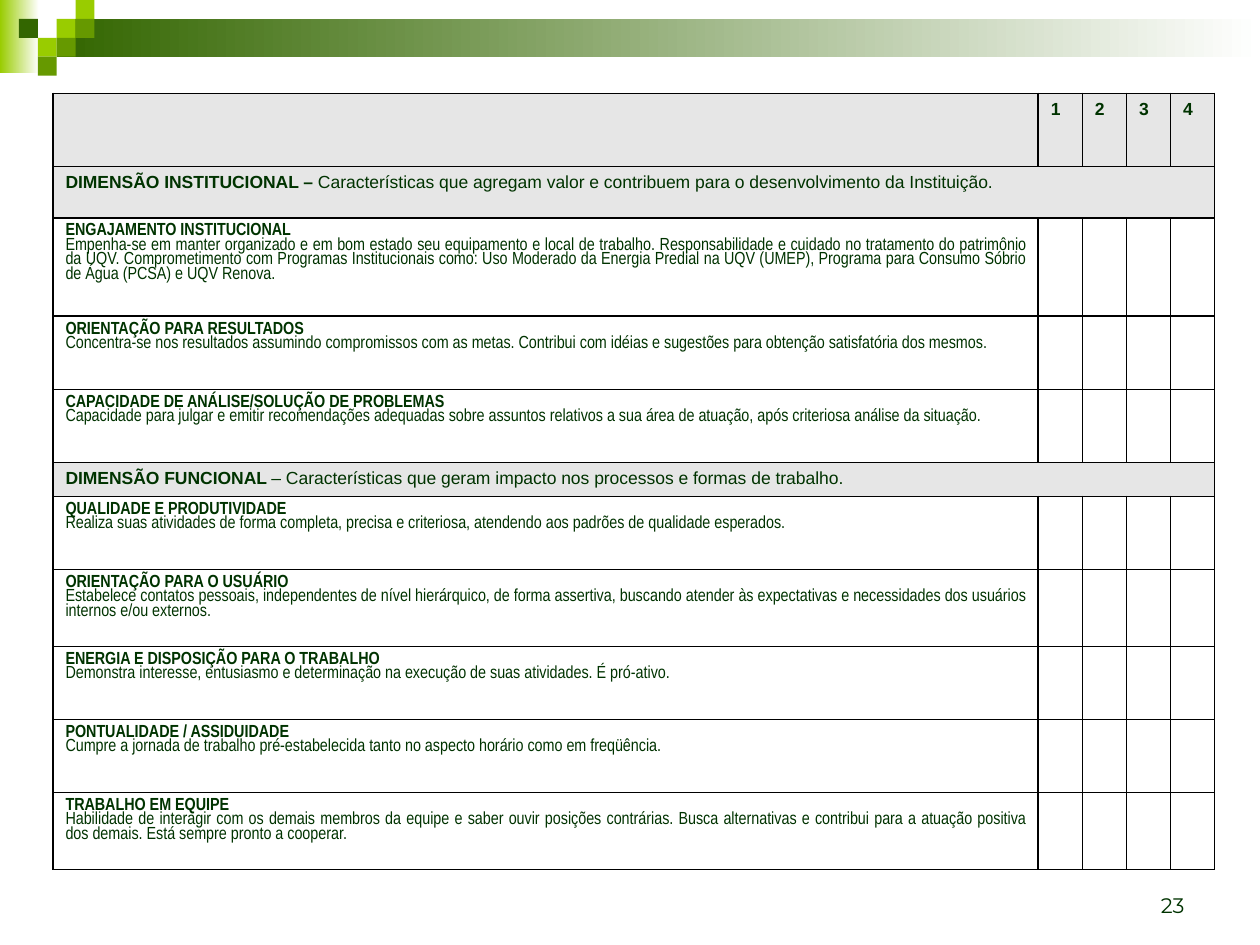
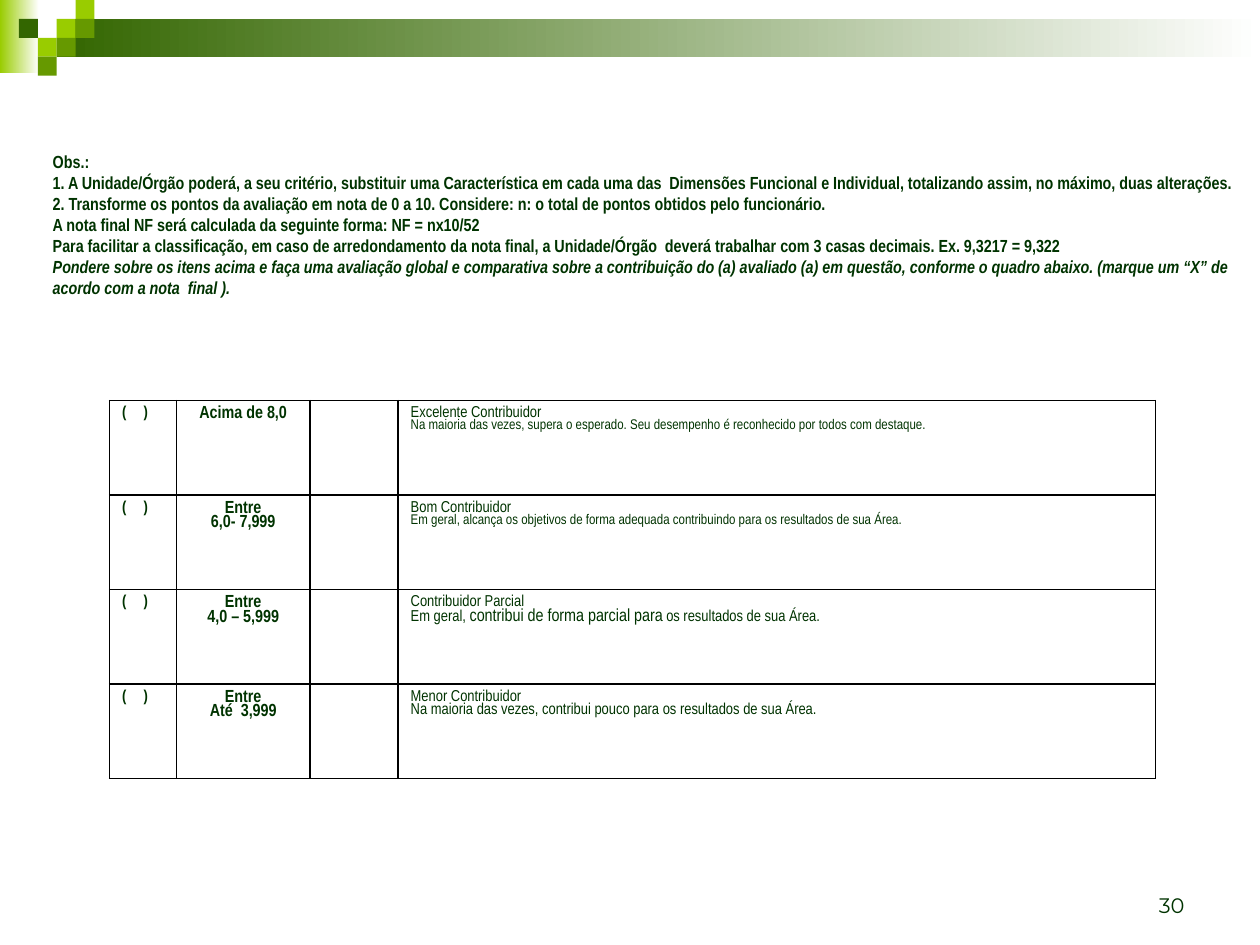
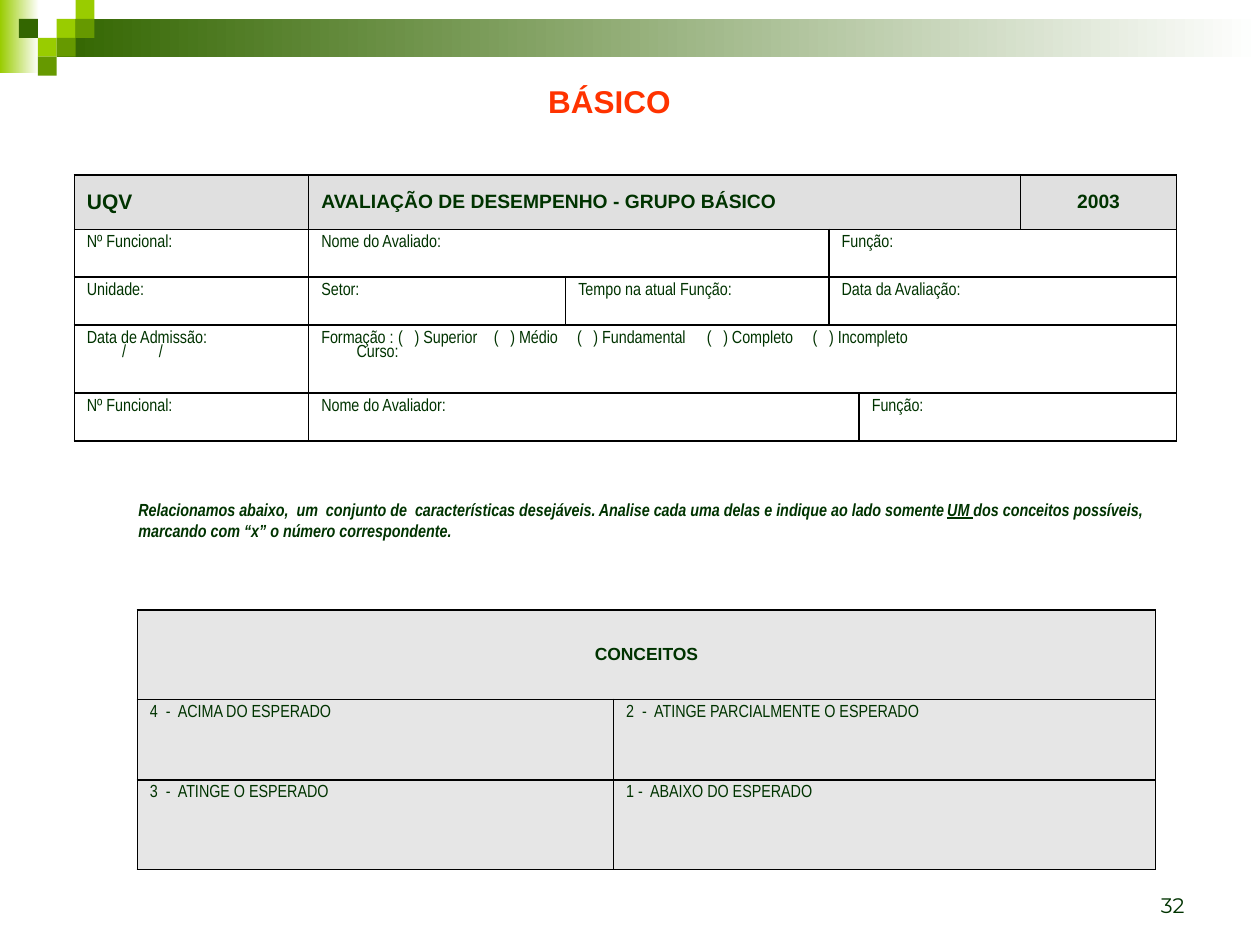
from dataclasses import dataclass, replace

from lxml.etree import SubElement
from pptx import Presentation
from pptx.dml.color import RGBColor
from pptx.enum.shapes import MSO_SHAPE as Shape
from pptx.enum.text import MSO_ANCHOR as Anchor, PP_ALIGN as Align
from pptx.oxml.ns import qn
from pptx.util import Inches, Pt

WIDTH, HEIGHT = 10, 7.5
TITLE_ONLY, BLANK = 5, 6


class Theme:
    ink, accent, line = "003300", "FF3300", "000000"
    lime, leaf, forest, white = "99CC00", "669900", "336600", "FFFFFF"
    grey, header_grey = "E6E6E6", "E0E0E0"
    sans, narrow, number = "Arial", "Arial Narrow", "Montserrat"
    tiny, small, body, heading, large, title = 8, 9, 10, 11, 12, 18
    tight = 0.9
    tile = 0.15


@dataclass(frozen=True)
class Style:
    size: float = Theme.body
    font: str = Theme.narrow
    bold: bool = False
    italic: bool = False
    color: str = Theme.ink
    align: Align = Align.LEFT
    spacing: float = 1.0


@dataclass(frozen=True)
class Para:
    """Text is a string, or a list of (text, font attributes) runs; tabs are in inches."""
    text: object
    style: Style
    tabs: tuple = ()


@dataclass(frozen=True)
class Cell:
    paras: tuple = ()
    span: int = 1
    fill: str = ""
    anchor: Anchor = Anchor.TOP
    framed: bool = True


NARROW = Style(spacing=Theme.tight)
NARROW_BOLD = replace(NARROW, bold=True)
JUSTIFIED = replace(NARROW, align=Align.JUSTIFY)
CENTERED = replace(NARROW_BOLD, align=Align.CENTER)
SANS = Style(font=Theme.sans)
SANS_BOLD = replace(SANS, bold=True)
NOTE = Style(bold=True)
NOTE_ITALIC = replace(NOTE, italic=True)
TITLE = replace(SANS_BOLD, size=Theme.title, color=Theme.accent)
PAGE_NUMBER = Style(Theme.large, Theme.number, align=Align.RIGHT)

# Content: criteria form
SCORES = ["1", "2", "3", "4"]
DIMENSIONS = [
    ("DIMENSÃO INSTITUCIONAL – ",
     "Características que agregam valor e contribuem para o desenvolvimento da Instituição.",
     0.41, [
         ("ENGAJAMENTO INSTITUCIONAL",
          "Empenha-se em manter organizado e em bom estado seu equipamento e local de trabalho. "
          "Responsabilidade e cuidado no tratamento do patrimônio da UQV. Comprometimento com "
          "Programas Institucionais como: Uso Moderado da Energia Predial na UQV (UMEP), "
          "Programa para Consumo Sóbrio de Água (PCSA) e UQV Renova.", 0.78),
         ("ORIENTAÇÃO PARA RESULTADOS",
          "Concentra-se nos resultados assumindo compromissos com as metas. Contribui com idéias "
          "e sugestões para obtenção satisfatória dos mesmos.", 0.58),
         ("CAPACIDADE DE ANÁLISE/SOLUÇÃO DE PROBLEMAS",
          "Capacidade para julgar e emitir recomendações adequadas sobre assuntos relativos a sua "
          "área de atuação, após criteriosa análise da situação.", 0.58),
     ]),
    ("DIMENSÃO FUNCIONAL ",
     "– Características que geram impacto nos processos e formas de trabalho.",
     0.27, [
         ("QUALIDADE E PRODUTIVIDADE",
          "Realiza suas atividades de forma completa, precisa e criteriosa, atendendo aos padrões "
          "de qualidade esperados.", 0.58),
         ("ORIENTAÇÃO PARA O USUÁRIO",
          "Estabelece contatos pessoais, independentes de nível hierárquico, de forma assertiva, "
          "buscando atender às expectativas e necessidades dos usuários internos e/ou externos.",
          0.61),
         ("ENERGIA E DISPOSIÇÃO PARA O TRABALHO",
          "Demonstra interesse, entusiasmo e determinação na execução de suas atividades. "
          "É pró-ativo.", 0.58),
         ("PONTUALIDADE / ASSIDUIDADE",
          "Cumpre a jornada de trabalho pré-estabelecida tanto no aspecto horário como em "
          "freqüência.", 0.58),
         ("TRABALHO EM EQUIPE",
          "Habilidade de interagir com os demais membros da equipe e saber ouvir posições "
          "contrárias. Busca alternativas e contribui para a atuação positiva dos demais. "
          "Está sempre pronto a cooperar.", 0.61),
     ]),
]

# Content: final grade
REMARKS = [
    "Obs.:",
    "1. A Unidade/Órgão poderá, a seu critério, substituir uma Característica em cada uma das  "
    "Dimensões Funcional e Individual, totalizando assim, no máximo, duas alterações.",
    "2. Transforme os pontos da avaliação em nota de 0 a 10. Considere: n: o total de pontos "
    "obtidos pelo funcionário.",
    "A nota final NF será calculada da seguinte forma: NF = nx10/52",
    "Para facilitar a classificação, em caso de arredondamento da nota final, a Unidade/Órgão  "
    "deverá trabalhar com 3 casas decimais. Ex. 9,3217 = 9,322",
]
INSTRUCTION = (
    "Pondere sobre os itens acima e faça uma avaliação global e comparativa sobre a contribuição "
    "do (a) avaliado (a) em questão, conforme o quadro abaixo. (marque um “X” de acordo com a "
    "nota  final ).")
GRADES = [
    (["Acima de 8,0"], "Excelente Contribuidor",
     "Na maioria das vezes, supera o esperado. Seu desempenho é reconhecido por todos com "
     "destaque.", Theme.tiny),
    (["Entre", "6,0- 7,999"], "Bom Contribuidor",
     "Em geral, alcança os objetivos de forma adequada contribuindo para os resultados de sua "
     "Área.", Theme.tiny),
    (["Entre", "4,0 – 5,999"], "Contribuidor Parcial",
     [("Em geral, ", {}), ("contribui de forma parcial para", {"size": Pt(Theme.body)}),
      (" os resultados de sua Área.", {})], Theme.small),
    (["Entre", "Até  3,999"], "Menor Contribuidor",
     "Na maioria das vezes, contribui pouco para os resultados de sua Área.", Theme.small),
]

# Content: identification form, each field with the number of columns it takes
HEADINGS = [("UQV", 1, Theme.large, Align.LEFT),
            ("AVALIAÇÃO DE DESEMPENHO - GRUPO BÁSICO", 4, Theme.heading, Align.LEFT),
            ("2003", 2, Theme.heading, Align.CENTER)]
OPTION_STARTS = (0.61, 1.37, 2.03, 3.06, 3.9)
OPTION_GAP = 0.13
OPTION_TABS = tuple(x for start in OPTION_STARTS for x in (start, start + OPTION_GAP))
EDUCATION = "Formação :" + "".join(
    f"\t(\t) {level}" for level in ["Superior", "Médio", "Fundamental", "Completo", "Incompleto"])
FIELDS = [
    [("Nº Funcional:", 1), ("Nome do Avaliado:", 2), ("Função:", 4)],
    [("Unidade:", 1), ("Setor:", 1), ("Tempo na atual Função:", 1), ("Data da Avaliação:", 4)],
    [("Data de Admissão:", 1, ("\t/\t/", (0.28, 0.57))),
     (EDUCATION, 6, ("\tCurso:", (0.28,)))],
    [("Nº Funcional:", 1), ("Nome do Avaliador:", 3), ("Função:", 3)],
]
GUIDANCE = [
    [("Relacionamos abaixo,  um  conjunto de  características desejáveis. Analise cada uma delas "
      "e indique ao lado somente ", {}), ("UM ", {"underline": True}),
     ("dos conceitos possíveis,", {})],
    "marcando com “x” o número correspondente.",
]
CONCEPTS = [("4  -  ACIMA DO ESPERADO", "2  -  ATINGE PARCIALMENTE O ESPERADO"),
            ("3  -  ATINGE O ESPERADO", "1 -  ABAIXO DO ESPERADO")]


def rgb(color):
    return RGBColor.from_string(color)


def write(frame, paras):
    for index, para in enumerate(paras):
        style = para.style
        line = frame.paragraphs[0] if index == 0 else frame.add_paragraph()
        line.alignment, line.line_spacing = style.align, style.spacing
        if para.tabs:
            stops = SubElement(line._p.get_or_add_pPr(), qn("a:tabLst"))
            for position in para.tabs:
                SubElement(stops, qn("a:tab"), pos=str(Inches(position)), algn="l")
        font = line.font
        font.size, font.name = Pt(style.size), style.font
        font.bold, font.italic = style.bold, style.italic
        font.color.rgb = rgb(style.color)
        runs = [(para.text, {})] if isinstance(para.text, str) else para.text
        for text, changes in runs:
            run = line.add_run()
            run.text = text
            for attribute, value in changes.items():
                setattr(run.font, attribute, value)


def add_text(slide, box, paras, anchor, bottom=0.05):
    frame = slide.shapes.add_textbox(*map(Inches, box)).text_frame
    frame.word_wrap, frame.vertical_anchor = True, anchor
    frame.margin_bottom = Inches(bottom)
    write(frame, paras)


def add_block(slide, box, color, fade=False):
    """Draw a borderless rectangle, plain or fading to white from left to right."""
    block = slide.shapes.add_shape(Shape.RECTANGLE, *map(Inches, box))
    block.shadow.inherit = False
    block.line.fill.background()
    if fade:
        block.fill.gradient()
        block.fill.gradient_angle = 0
        for stop, shade, place in zip(block.fill.gradient_stops, (color, Theme.white), (0, 1)):
            stop.color.rgb, stop.position = rgb(shade), place
    else:
        block.fill.solid()
        block.fill.fore_color.rgb = rgb(color)


def start_slide(deck, layout, number):
    """Add a slide with the shared band, corner tiles and page number."""
    slide = deck.slides.add_slide(deck.slide_layouts[layout])
    tile = Theme.tile
    add_block(slide, (0, 0, 0.31, 0.58), Theme.lime, fade=True)
    add_block(slide, (3 * tile, tile, WIDTH - 3 * tile, 2 * tile), Theme.forest, fade=True)
    tiles = [(3, 1, Theme.lime), (4, 0, Theme.lime), (4, 1, Theme.leaf), (2, 2, Theme.lime),
             (1, 1, Theme.forest), (3, 2, Theme.leaf), (2, 3, Theme.leaf)]
    for column, row, color in tiles:
        add_block(slide, (column * tile, row * tile, tile, tile), color)
    add_text(slide, (7.17, 6.83, 2.33, 0.5), [Para(number, PAGE_NUMBER)], Anchor.BOTTOM)
    return slide


def add_border(cell, framed):
    """Line all four sides, or only the top one when the cell is not framed."""
    props = cell._tc.get_or_add_tcPr()
    for side in "LRTB":
        edge = SubElement(props, qn(f"a:ln{side}"), w=str(Pt(1)))
        if framed or side == "T":
            SubElement(SubElement(edge, qn("a:solidFill")), qn("a:srgbClr"), val=Theme.line)
        else:
            SubElement(edge, qn("a:noFill"))


def add_grid(slide, left, top, columns, heights, rows):
    """Build a table from rows of Cells; a Cell with a span covers the columns after it."""
    size = (left, top, sum(columns), sum(heights))
    table = slide.shapes.add_table(len(heights), len(columns), *map(Inches, size)).table
    table.first_row = table.horz_banding = False
    for column, width in zip(table.columns, columns):
        column.width = Inches(width)
    for row, height in zip(table.rows, heights):
        row.height = Inches(height)
    for r, row in enumerate(rows):
        c = 0
        for part in row:
            last = c + part.span - 1
            for column in range(c, last + 1):
                cell = table.cell(r, column)
                add_border(cell, part.framed)
                if part.fill:
                    cell.fill.solid()
                    cell.fill.fore_color.rgb = rgb(part.fill)
                else:
                    cell.fill.background()
            cell = table.cell(r, c)
            if part.span > 1:
                cell.merge(table.cell(r, last))
            cell.vertical_anchor = part.anchor
            write(cell.text_frame, part.paras)
            c = last + 1


def build_criteria(deck):
    slide = start_slide(deck, BLANK, "23")
    rows = [[Cell(fill=Theme.grey)]
            + [Cell((Para(score, SANS_BOLD),), fill=Theme.grey) for score in SCORES]]
    heights = [0.58]
    for name, meaning, height, criteria in DIMENSIONS:
        heading = Para([(name, {"bold": True}), (meaning, {})],
                       replace(SANS, align=Align.JUSTIFY))
        rows.append([Cell((heading,), span=1 + len(SCORES), fill=Theme.grey)])
        heights.append(height)
        for criterion, description, height in criteria:
            paras = (Para(criterion, NARROW_BOLD), Para(description, JUSTIFIED))
            rows.append([Cell(paras)] + [Cell()] * len(SCORES))
            heights.append(height)
    add_grid(slide, 0.42, 0.74, [7.82] + [0.35] * len(SCORES), heights, rows)


def build_grades(deck):
    slide = start_slide(deck, BLANK, "30")
    remarks = [Para(remark, NOTE) for remark in REMARKS] + [Para(INSTRUCTION, NOTE_ITALIC)]
    add_text(slide, (0.32, 1.11, 9.65, 1.57), remarks, Anchor.MIDDLE, bottom=0.28)
    tick = Para("(\t)", replace(NARROW_BOLD, size=Theme.small), tabs=(0.17,))
    rows = []
    for limits, name, description, size in GRADES:
        bounds = tuple(Para(limit, CENTERED) for limit in limits)
        verdict = (Para(name, replace(JUSTIFIED, size=Theme.small)),
                   Para(description, replace(JUSTIFIED, size=size)))
        rows.append([Cell((tick,)), Cell(bounds), Cell(), Cell(verdict)])
    add_grid(slide, 0.87, 3.18, [0.53, 1.06, 0.7, 6.01], [0.75] * len(rows), rows)


def field_cell(label, span, second=None):
    paras = [Para(label, NARROW, tabs=OPTION_TABS if "\t" in label else ())]
    if second:
        text, tabs = second
        paras.append(Para(text, NARROW, tabs=tabs))
    return Cell(tuple(paras), span)


def build_identification(deck):
    slide = start_slide(deck, TITLE_ONLY, "32")
    title = slide.shapes.title
    title.left, title.top, title.width, title.height = map(Inches, (4.25, 0.6, 1.5, 0.4))
    title.text_frame.vertical_anchor = Anchor.TOP
    write(title.text_frame, [Para("BÁSICO", TITLE)])

    header = [Cell((Para(text, replace(SANS_BOLD, size=size, align=align)),), span,
                   Theme.header_grey, Anchor.MIDDLE) for text, span, size, align in HEADINGS]
    fields = [[field_cell(*field) for field in row] for row in FIELDS]
    closing = [Cell(span=span, framed=False) for span in (1, 1, 1, 1, 2, 1)]
    add_grid(slide, 0.59, 1.39, [1.86, 2.04, 2.09, 0.23, 1.28, 0.23, 1.01],
             [0.43, 0.38, 0.38, 0.54, 0.38, 0.81], [header, *fields, closing])

    add_text(slide, (1, 3.88, 8.17, 0.73), [Para(text, NOTE_ITALIC) for text in GUIDANCE],
             Anchor.MIDDLE, bottom=0.28)

    heading = Para("CONCEITOS", replace(SANS_BOLD, align=Align.CENTER))
    concepts = [[Cell((Para(text, JUSTIFIED),), fill=Theme.grey) for text in pair]
                for pair in CONCEPTS]
    add_grid(slide, 1.09, 4.84, [3.78, 4.3], [0.71, 0.64, 0.71],
             [[Cell((heading,), 2, Theme.grey, Anchor.MIDDLE)], *concepts])


def main():
    deck = Presentation()
    deck.slide_width, deck.slide_height = Inches(WIDTH), Inches(HEIGHT)
    for build in (build_criteria, build_grades, build_identification):
        build(deck)
    deck.save("out.pptx")


if __name__ == "__main__":
    main()
